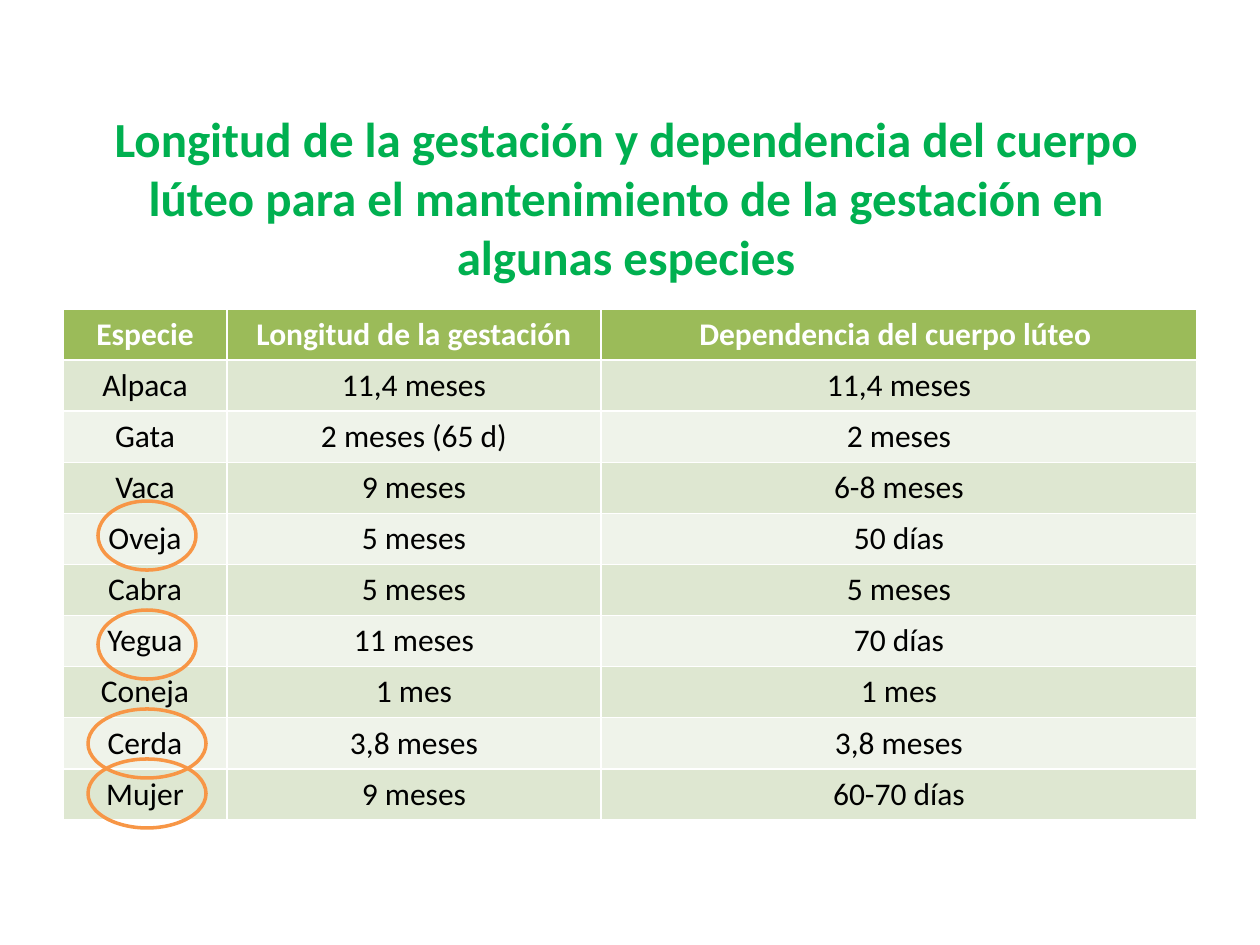
from dataclasses import dataclass

from pptx import Presentation
from pptx.dml.color import RGBColor
from pptx.enum.shapes import MSO_SHAPE
from pptx.enum.text import MSO_ANCHOR, PP_ALIGN
from pptx.util import Emu, Pt

OVAL = MSO_SHAPE.OVAL
MIDDLE = MSO_ANCHOR.MIDDLE
CENTER = PP_ALIGN.CENTER
SCALE = 914400 / 126


@dataclass(frozen=True)
class Theme:
    """Colours and type sizes of the slide."""
    face: str = "Calibri"
    green: str = "00B050"
    head: str = "9BBB59"
    bands: tuple = ("EFF3EA", "DEE7D1")
    white: str = "FFFFFF"
    black: str = "000000"
    ring: str = "F79646"
    title: int = 28
    body: int = 18
    line: int = 2


THEME = Theme()
TITLE = ("Longitud de la gestación y dependencia del cuerpo lúteo "
         "para el mantenimiento de la gestación en algunas especies")
COLS = (164, 374, 596)
ROWS = (
    ("Especie", "Longitud de la gestación", "Dependencia del cuerpo lúteo "),
    ("Alpaca", "11,4 meses", "11,4 meses"),
    ("Gata", "2 meses (65 d)", "2 meses"),
    ("Vaca", "9 meses", "6-8 meses"),
    ("Oveja", "5 meses", "50 días"),
    ("Cabra", "5 meses", "5 meses"),
    ("Yegua", "11 meses", "70 días"),
    ("Coneja", "1 mes", "1 mes"),
    ("Cerda", "3,8 meses", "3,8 meses"),
    ("Mujer", "9 meses", "60-70 días"),
)
RINGS = ((192, 98), (301, 98), (400, 118), (450, 118))


def px(num):
    """Turn pixels into EMU."""
    return Emu(round(num * SCALE))


def rgb(code):
    """Turn a hex code into a colour."""
    return RGBColor.from_string(code)


def write(frame, text, size, color, bold):
    """Put one centred paragraph into a text frame."""
    para = frame.paragraphs[0]
    para.alignment = CENTER
    run = para.add_run()
    run.text = text
    style = {"name": THEME.face, "size": Pt(size), "bold": bold}
    for key, value in style.items():
        setattr(run.font, key, value)
    run.font.color.rgb = rgb(color)


def add_title(slide, box):
    """Place the title in the given box."""
    frame = slide.shapes.add_textbox(*map(px, box)).text_frame
    for key, value in {"word_wrap": True, "vertical_anchor": MIDDLE}.items():
        setattr(frame, key, value)
    write(frame, TITLE, THEME.title, THEME.green, True)


def add_grid(slide, box):
    """Place the table of species in the given box."""
    table = slide.shapes.add_table(len(ROWS), len(COLS), *map(px, box)).table
    for col, width in zip(table.columns, COLS):
        col.width = px(width)
    for i, row in enumerate(ROWS):
        top = i == 0
        table.rows[i].height = px(box[3] / len(ROWS))
        for j, text in enumerate(row):
            cell = table.cell(i, j)
            cell.fill.solid()
            cell.fill.fore_color.rgb = rgb(THEME.head if top else THEME.bands[i % 2])
            color = THEME.white if top else THEME.black
            write(cell.text_frame, text, THEME.body, color, top)


def add_rings(slide, box):
    """Circle the marked species in the first column of the given box."""
    left, top = box[:2]
    mid = left + 84
    for down, width in RINGS:
        ring = slide.shapes.add_shape(
            OVAL, *map(px, (mid - width / 2, top + down, width, 69)))
        ring.shadow.inherit = False
        ring.fill.background()
        ring.line.color.rgb = rgb(THEME.ring)
        ring.line.width = Pt(THEME.line)


def main():
    """Build and save the slide."""
    deck = Presentation()
    deck.slide_width, deck.slide_height = px(1260), px(945)
    slide = deck.slides.add_slide(deck.slide_layouts[6])
    grid = (63, 309, 1134, 511)
    add_title(slide, (59, 118, 1134, 158))
    add_grid(slide, grid)
    add_rings(slide, grid)
    deck.save("out.pptx")


if __name__ == "__main__":
    main()
